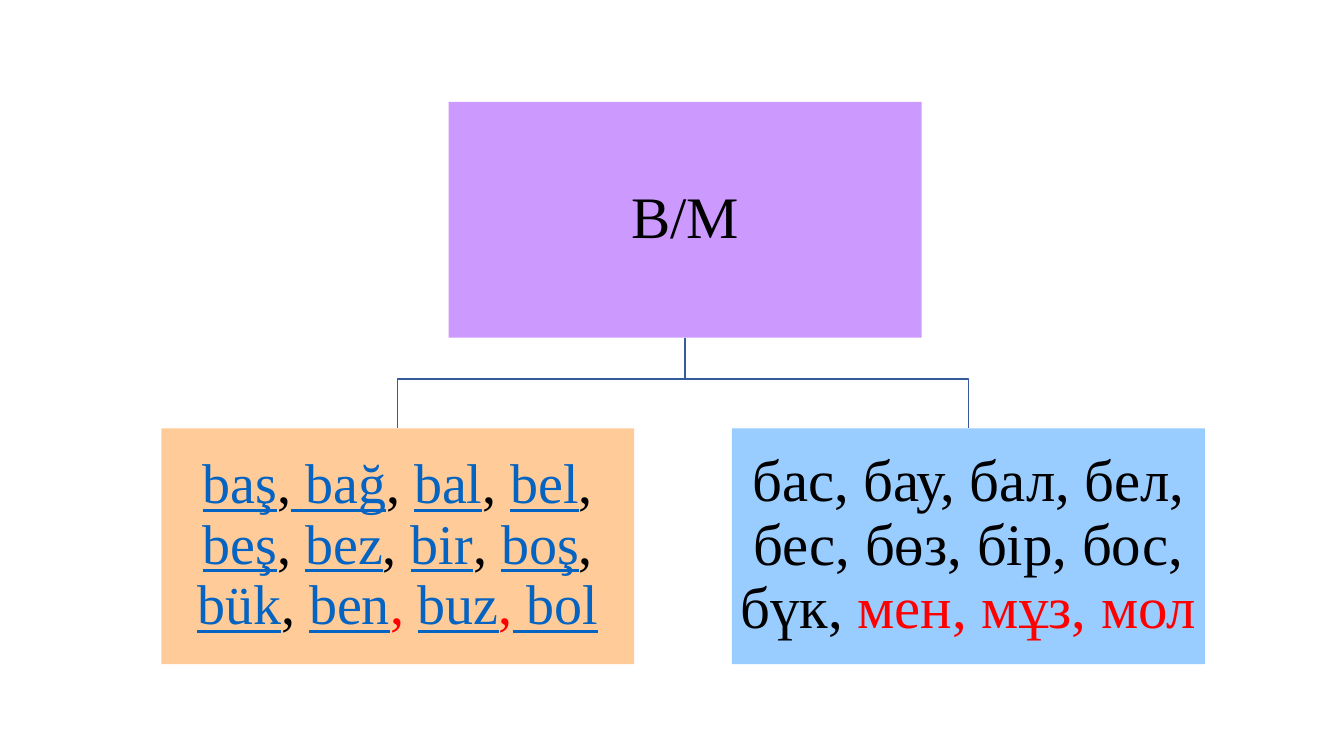
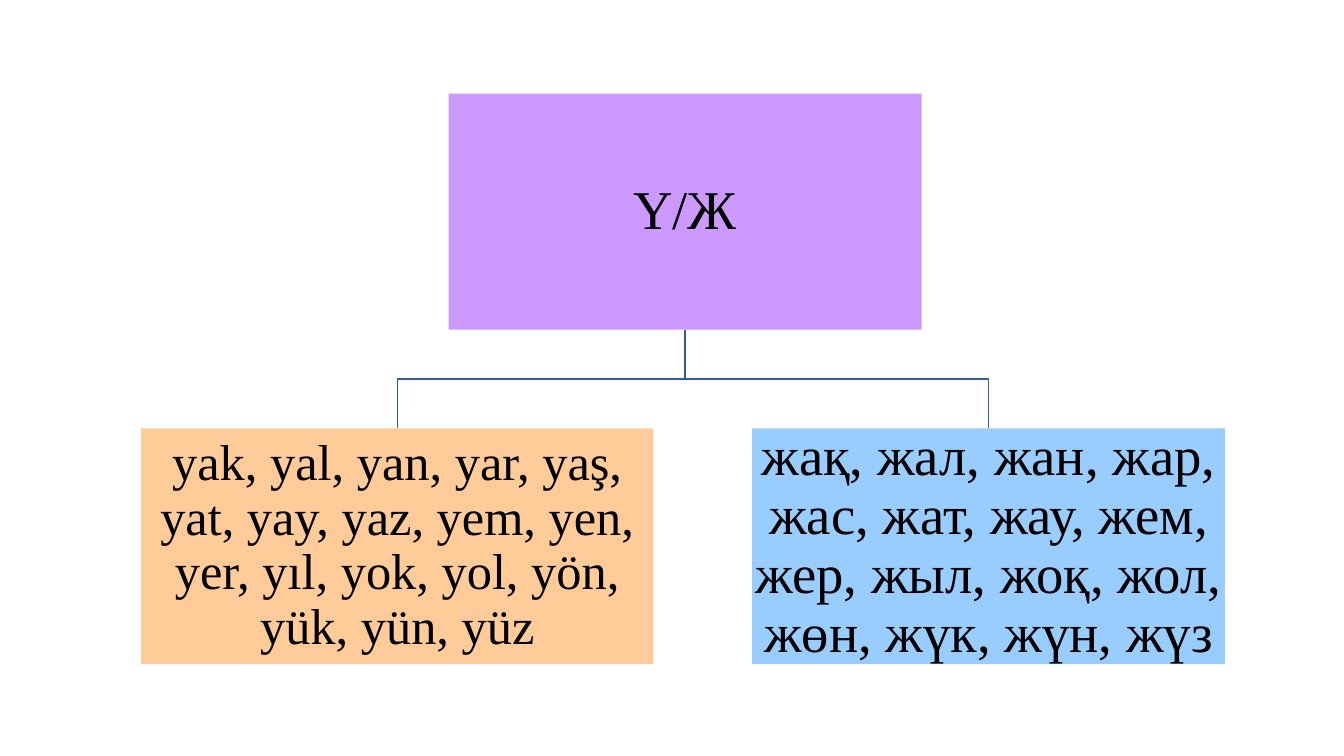
"""Build two tree slides pairing Turkish and Kazakh words by initial consonant."""
from dataclasses import dataclass

from pptx import Presentation
from pptx.dml.color import RGBColor
from pptx.enum import shapes, text
from pptx.util import Inches, Pt

BLACK = RGBColor(0x00, 0x00, 0x00)
RED = RGBColor(0xFF, 0x00, 0x00)
LINK_BLUE = RGBColor(0x05, 0x63, 0xC1)
LINE_BLUE = RGBColor(0x36, 0x5B, 0x9D)
PURPLE = RGBColor(0xCC, 0x99, 0xFF)
ORANGE = RGBColor(0xFF, 0xCC, 0x99)
SKY = RGBColor(0x99, 0xCC, 0xFF)

FONT = "Times New Roman"
BOX_W, BOX_H = 4.69, 2.34
CHILD_TOP = 4.25
BEND_Y = CHILD_TOP - 0.49
INSET = Inches(0.03)


@dataclass(frozen=True)
class Span:
    text: str
    color: RGBColor = BLACK
    underline: bool = False


@dataclass(frozen=True)
class Box:
    left: float
    top: float
    fill: RGBColor
    size: int
    spans: tuple[Span, ...]
    width: float = BOX_W

    @property
    def center(self) -> float:
        return self.left + self.width / 2


@dataclass(frozen=True)
class Tree:
    root: Box
    children: tuple[Box, ...]


def link(word: str) -> Span:
    return Span(word, LINK_BLUE, True)


COMMA, COMMA_SPACE = Span(","), Span(", ")

TURKISH_B = (
    link("baş"), COMMA, link(" bağ"), COMMA_SPACE, link("bal"), COMMA_SPACE,
    link("bel"), COMMA_SPACE, link("beş"), COMMA_SPACE, link("bez"), COMMA_SPACE,
    link("bir"), COMMA_SPACE, link("boş"), COMMA, link(" bük"), COMMA_SPACE,
    link("ben"), Span(", ", RED), link("buz"), Span(",", RED), link(" bol"),
)
KAZAKH_B = (
    Span("бас, бау, бал, бел, бес, бөз, бір, бос, бүк, "),
    Span("мен, мұз, мол", RED),
)
TURKISH_Y = (Span("yak, yal, yan, yar, yaş, yat, yay, yaz, yem, yen, "
                  "yer, yıl, yok, yol, yön, yük, yün, yüz"),)
KAZAKH_ZH = (Span("жақ, жал, жан, жар, жас, жат, жау, жем, "
                  "жер, жыл, жоқ, жол, жөн, жүк, жүн, жүз"),)

TREES = (
    Tree(Box(4.45, 1.01, PURPLE, 42, (Span("B/М"),)),
         (Box(1.6, CHILD_TOP, ORANGE, 40, TURKISH_B),
          Box(7.26, CHILD_TOP, SKY, 42, KAZAKH_B))),
    Tree(Box(4.45, 0.93, PURPLE, 39, (Span("Y/Ж"),)),
         (Box(1.4, CHILD_TOP, ORANGE, 36, TURKISH_Y, width=5.08),
          Box(7.46, CHILD_TOP, SKY, 39, KAZAKH_ZH))),
)


def draw_branch(s, root: Box, child: Box) -> None:
    corners = [(root.center, root.top + BOX_H), (root.center, BEND_Y),
               (child.center, BEND_Y), (child.center, child.top)]
    start, *rest = [(Inches(x), Inches(y)) for x, y in corners]
    builder = s.shapes.build_freeform(*start)
    builder.add_line_segments(rest, close=False)
    sp = builder.convert_to_shape()
    sp.shadow.inherit = False
    sp.fill.background()
    sp.line.color.rgb = LINE_BLUE
    sp.line.width = Pt(1)


def draw_box(s, box: Box) -> None:
    sp = s.shapes.add_shape(shapes.MSO_SHAPE.RECTANGLE, Inches(box.left),
                            Inches(box.top), Inches(box.width), Inches(BOX_H))
    sp.shadow.inherit = False
    sp.fill.solid()
    sp.fill.fore_color.rgb = box.fill
    sp.line.fill.background()
    tf = sp.text_frame
    tf.word_wrap = True
    tf.vertical_anchor = text.MSO_ANCHOR.MIDDLE
    tf.margin_left = tf.margin_right = tf.margin_top = tf.margin_bottom = INSET
    p = tf.paragraphs[0]
    p.alignment = text.PP_ALIGN.CENTER
    p.line_spacing = 0.9
    p.font.name = FONT
    p.font.size = Pt(box.size)
    for span in box.spans:
        r = p.add_run()
        r.text = span.text
        r.font.color.rgb = span.color
        if span.underline:
            r.font.underline = True


def draw_tree(s, tree: Tree) -> None:
    for child in reversed(tree.children):
        draw_branch(s, tree.root, child)
    for box in (tree.root, *tree.children):
        draw_box(s, box)


def main() -> None:
    prs = Presentation()
    prs.slide_width, prs.slide_height = Inches(13.33), Inches(7.5)
    for tree in TREES:
        draw_tree(prs.slides.add_slide(prs.slide_layouts[6]), tree)
    prs.save("out.pptx")


if __name__ == "__main__":
    main()
